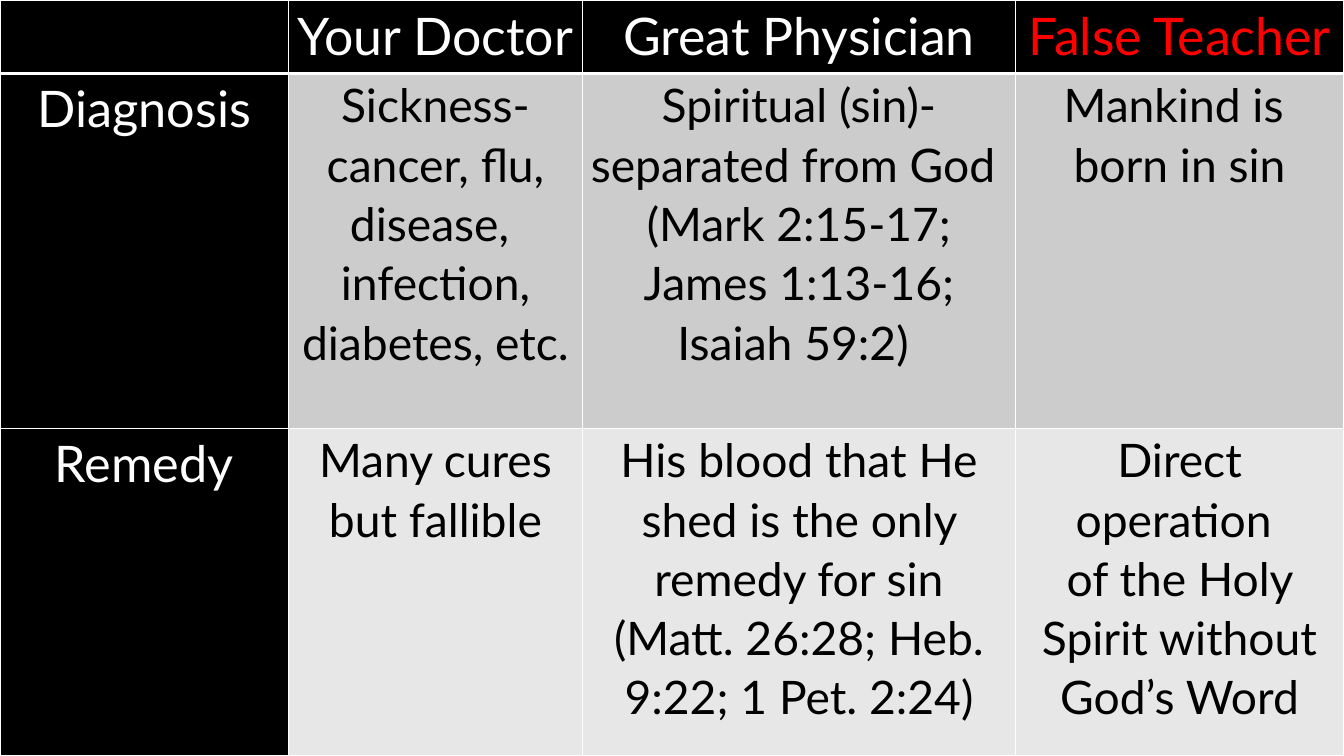
from dataclasses import dataclass

from lxml.etree import SubElement
from pptx import Presentation
from pptx.dml.color import RGBColor
from pptx.enum.text import PP_ALIGN
from pptx.oxml.ns import qn
from pptx.util import Inches, Pt


@dataclass(frozen=True)
class Theme:
    font: str = "Lato"
    black: str = "000000"
    white: str = "FFFFFF"
    red: str = "FF0000"
    bands: tuple = ("CCCCCC", "E7E7E7")
    head: int = 37
    label: int = 36
    body: int = 33
    thin: int = 1
    thick: int = 3
    leading: float = 1.07


COLS = (2.86, 2.92, 4.29, 3.26)
ROWS = (0.73, 3.52, 3.25)
CELLS = (
    ("", "Your Doctor", "Great Physician", "False Teacher"),
    (
        "Diagnosis",
        "Sickness-\ncancer, flu, disease, \ninfection, diabetes, etc.",
        "Spiritual (sin)- separated from God \n"
        "(Mark 2:15-17; James 1:13-16; Isaiah 59:2) ",
        "Mankind is \nborn in sin",
    ),
    (
        "Remedy",
        "Many cures but fallible",
        "His blood that He shed is the only remedy for sin\n"
        "(Matt. 26:28; Heb. 9:22; 1 Pet. 2:24)",
        "Direct operation \nof the Holy Spirit without God’s Word",
    ),
)


class Deck:
    def __init__(self, theme):
        self.theme = theme
        self.prs = Presentation()
        self.prs.slide_width = Inches(13.33)
        self.prs.slide_height = Inches(7.5)
        self.slide = self.prs.slides.add_slide(self.prs.slide_layouts[6])
        fill = self.slide.background.fill
        fill.solid()
        fill.fore_color.rgb = RGBColor.from_string(theme.black)

    def table(self, cols, rows, cells):
        frame = self.slide.shapes.add_table(
            len(rows), len(cols), 0, 0, Inches(sum(cols)), Inches(sum(rows))
        )
        grid = frame.table
        for col, width in zip(grid.columns, cols):
            col.width = Inches(width)
        for row, height in zip(grid.rows, rows):
            row.height = Inches(height)
        for r, texts in enumerate(cells):
            for c, text in enumerate(texts):
                self.cell(grid.cell(r, c), text, *self.style(r, c))
                self.border(grid.cell(r, c), r)

    def style(self, row, col):
        """Return the fill, text colour and type size for a grid position."""
        t = self.theme
        if row == 0:
            return t.black, t.red if col == 3 else t.white, t.head
        if col == 0:
            return t.black, t.white, t.label
        return t.bands[row - 1], t.black, t.body

    def cell(self, cell, text, fill, color, size):
        cell.fill.solid()
        cell.fill.fore_color.rgb = RGBColor.from_string(fill)
        cell.margin_left = cell.margin_right = Inches(0.07)
        cell.margin_top = cell.margin_bottom = 0
        cell.text = text
        for para in cell.text_frame.paragraphs:
            para.alignment = PP_ALIGN.CENTER
            para.line_spacing = self.theme.leading
            para.font.name = self.theme.font
            para.font.size = Pt(size)
            para.font.bold = False
            para.font.color.rgb = RGBColor.from_string(color)

    def border(self, cell, row):
        """Rule all four sides, with a heavy line under the header row."""
        t = self.theme
        widths = {
            "L": t.thin,
            "R": t.thin,
            "T": t.thick if row == 1 else t.thin,
            "B": t.thick if row == 0 else t.thin,
        }
        props = cell._tc.get_or_add_tcPr()
        for i, (side, width) in enumerate(widths.items()):
            line = SubElement(props, qn(f"a:ln{side}"), w=str(Pt(width)))
            paint = SubElement(line, qn("a:solidFill"))
            SubElement(paint, qn("a:srgbClr"), val=t.white)
            props.insert(i, line)


def main():
    deck = Deck(Theme())
    deck.table(COLS, ROWS, CELLS)
    deck.prs.save("out.pptx")


if __name__ == "__main__":
    main()
